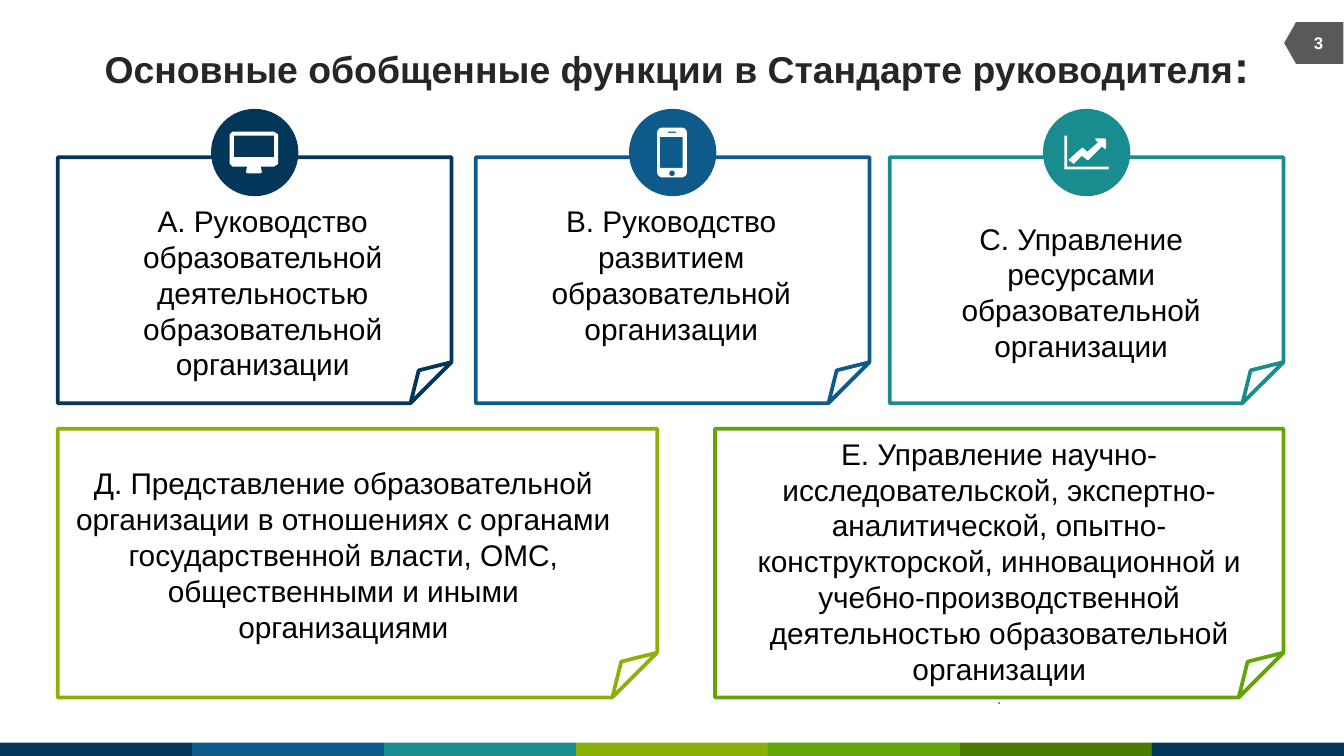
from dataclasses import dataclass
from typing import NamedTuple

from pptx import Presentation
from pptx.dml.color import RGBColor
from pptx.enum import shapes, text
from pptx.util import Inches, Pt


@dataclass(frozen=True)
class Theme:
    font: str = "Arial"
    navy: str = "023759"
    blue: str = "0E5A8B"
    teal: str = "198C8F"
    lime: str = "8BB106"
    green: str = "63A406"
    forest: str = "4A7B04"
    tag: str = "595959"
    title: str = "262626"
    body: str = "000000"
    muted: str = "808080"
    white: str = "FFFFFF"
    title_size: int = 20
    colon_size: int = 24
    body_size: int = 16
    dot_size: int = 10
    number_size: int = 9
    outline: int = 2


class Box(NamedTuple):
    x: float
    y: float
    w: float
    h: float

    def emu(self) -> list:
        return [Inches(v) for v in self]


class Card(NamedTuple):
    frame: Box
    label: Box
    color: str
    wording: str


class Badge(NamedTuple):
    x: float
    color: str
    contours: list


T = Theme()
Kind = shapes.MSO_SHAPE
SLIDE_W = 10
SLIDE_H = SLIDE_W * 9 / 16
STRIP = [T.navy, T.blue, T.teal, T.lime, T.green, T.forest, T.navy]
STRIP_H = 0.1
TOP_Y, TOP_W, TOP_H = 1.17, 2.93, 1.83
LOW_Y, LOW_H = 3.19, 2
LEFT = 0.43
BADGE_Y, BADGE_SIZE = 0.81, 0.65

CARDS = [
    Card(Box(LEFT, TOP_Y, TOP_W, TOP_H), Box(0.55, 1.46, 2.81, 1.45), T.navy,
         "А. Руководство образовательной деятельностью образовательной организации"),
    Card(Box(3.54, TOP_Y, TOP_W, TOP_H), Box(3.83, 1.46, 2.33, 1.18), T.blue,
         "В. Руководство развитием образовательной организации"),
    Card(Box(6.62, TOP_Y, TOP_W, TOP_H), Box(6.88, 1.59, 2.33, 1.18), T.teal,
         "С. Управление ресурсами образовательной организации"),
    Card(Box(LEFT, LOW_Y, 4.46, LOW_H), Box(LEFT, 3.41, 4.25, 1.45), T.lime,
         "Д. Представление образовательной организации в отношениях с органами "
         "государственной власти, ОМС, общественными и иными организациями"),
    Card(Box(5.32, LOW_Y, 4.23, LOW_H), Box(5.32, LOW_Y, 4.23, 2.15), T.green,
         "Е. Управление научно-исследовательской, экспертно-аналитической, "
         "опытно-конструкторской, инновационной и учебно-производственной "
         "деятельностью образовательной организации"),
]

# Icon contours, in hundredths of an inch from the badge's top left corner
MONITOR = [
    [(14, 19), (16, 17), (47, 17), (50, 19), (50, 41), (47, 43), (37, 43), (38, 47),
     (37, 48), (27, 48), (26, 47), (27, 43), (16, 43), (14, 41)],
    [(17, 20), (47, 20), (47, 36), (17, 36)],
]
PHONE = [
    [(21, 17), (22, 15), (24, 14), (40, 14), (42, 15), (43, 17),
     (43, 48), (42, 50), (40, 51), (24, 51), (22, 50), (21, 48)],
    [(23, 21), (40, 21), (40, 44), (23, 44)],
    [(29, 17), (35, 17), (35, 18), (29, 18)],
    [(31, 46), (33, 46), (34, 47), (34, 49), (33, 50), (31, 50), (30, 49), (30, 47)],
]
CHART = [
    [(49, 45), (16, 45), (16, 20), (18, 20), (18, 43), (49, 43)],
    [(47, 29), (46, 30), (44, 28), (34, 38), (33, 38), (29, 35), (23, 41), (19, 38),
     (29, 29), (30, 29), (33, 32), (41, 25), (39, 23), (39, 22), (46, 22), (47, 23)],
]
BADGES = [Badge(1.57, T.navy, MONITOR), Badge(4.68, T.blue, PHONE), Badge(7.76, T.teal, CHART)]


def paint(sp, color: str) -> None:
    """Give a shape a flat fill without line or shadow."""
    sp.shadow.inherit = False
    sp.fill.solid()
    sp.fill.fore_color.rgb = RGBColor.from_string(color)
    sp.line.fill.background()


def add_solid(slide, kind, box: Box, color: str):
    sp = slide.shapes.add_shape(kind, *box.emu())
    paint(sp, color)
    return sp


def style(font, size: int, color: str, bold: bool = False) -> None:
    font.name, font.size, font.bold = T.font, Pt(size), bold
    font.color.rgb = RGBColor.from_string(color)


def add_label(slide, box: Box, wording: str, size: int, color: str,
              bold: bool = False, middle: bool = False):
    """Add a centred text box and return its text frame."""
    tf = slide.shapes.add_textbox(*box.emu()).text_frame
    tf.word_wrap = True
    tf.vertical_anchor = text.MSO_ANCHOR.MIDDLE if middle else text.MSO_ANCHOR.TOP
    p = tf.paragraphs[0]
    p.alignment = text.PP_ALIGN.CENTER
    style(p.font, size, color, bold)
    p.add_run().text = wording
    return tf


def add_card(slide, card: Card):
    """Draw a card and return the text frame of its label."""
    sp = slide.shapes.add_shape(Kind.FOLDED_CORNER, *card.frame.emu())
    sp.shadow.inherit = False
    sp.fill.background()
    sp.line.color.rgb = RGBColor.from_string(card.color)
    sp.line.width = Pt(T.outline)
    return add_label(slide, card.label, card.wording, T.body_size, T.body)


def add_badge(slide, badge: Badge) -> None:
    add_solid(slide, Kind.OVAL, Box(badge.x, BADGE_Y, BADGE_SIZE, BADGE_SIZE), badge.color)
    first, *others = badge.contours
    builder = slide.shapes.build_freeform(*first[0], scale=Inches(0.01))
    builder.add_line_segments(first[1:], close=True)
    for contour in others:
        builder.move_to(*contour[0])
        builder.add_line_segments(contour[1:], close=True)
    paint(builder.convert_to_shape(Inches(badge.x), Inches(BADGE_Y)), T.white)


def add_strip(slide) -> None:
    w = SLIDE_W / len(STRIP)
    for i, color in enumerate(STRIP):
        add_solid(slide, Kind.RECTANGLE, Box(i * w, SLIDE_H - STRIP_H, w, STRIP_H), color)


def add_title(slide) -> None:
    tf = add_label(slide, Box(0.19, 0.29, 9.69, 0.39),
                   "Основные обобщенные функции в Стандарте руководителя",
                   T.title_size, T.title, bold=True, middle=True)
    tf.word_wrap = False
    tf.margin_left = tf.margin_right = tf.margin_top = tf.margin_bottom = 0
    r = tf.paragraphs[0].add_run()
    r.text = ":"
    r.font.size = Pt(T.colon_size)


def add_page_number(slide) -> None:
    tag = add_solid(slide, Kind.FLOWCHART_OFFPAGE_CONNECTOR, Box(9.62, 0.1, 0.31, 0.44), T.tag)
    tag.rotation = 90
    add_label(slide, Box(9.6, 0.17, 0.42, 0.3), "3", T.number_size, T.white,
              bold=True, middle=True)


def main() -> None:
    prs = Presentation()
    prs.slide_width, prs.slide_height = Inches(SLIDE_W), Inches(SLIDE_H)
    slide = prs.slides.add_slide(prs.slide_layouts[6])
    add_strip(slide)
    add_title(slide)
    add_page_number(slide)
    labels = [add_card(slide, card) for card in CARDS]
    p = labels[-1].paragraphs[0]
    p.add_line_break()
    dot = p.add_run()
    dot.text = "."
    style(dot.font, T.dot_size, T.muted)
    for badge in BADGES:
        add_badge(slide, badge)
    prs.save("out.pptx")


if __name__ == "__main__":
    main()
